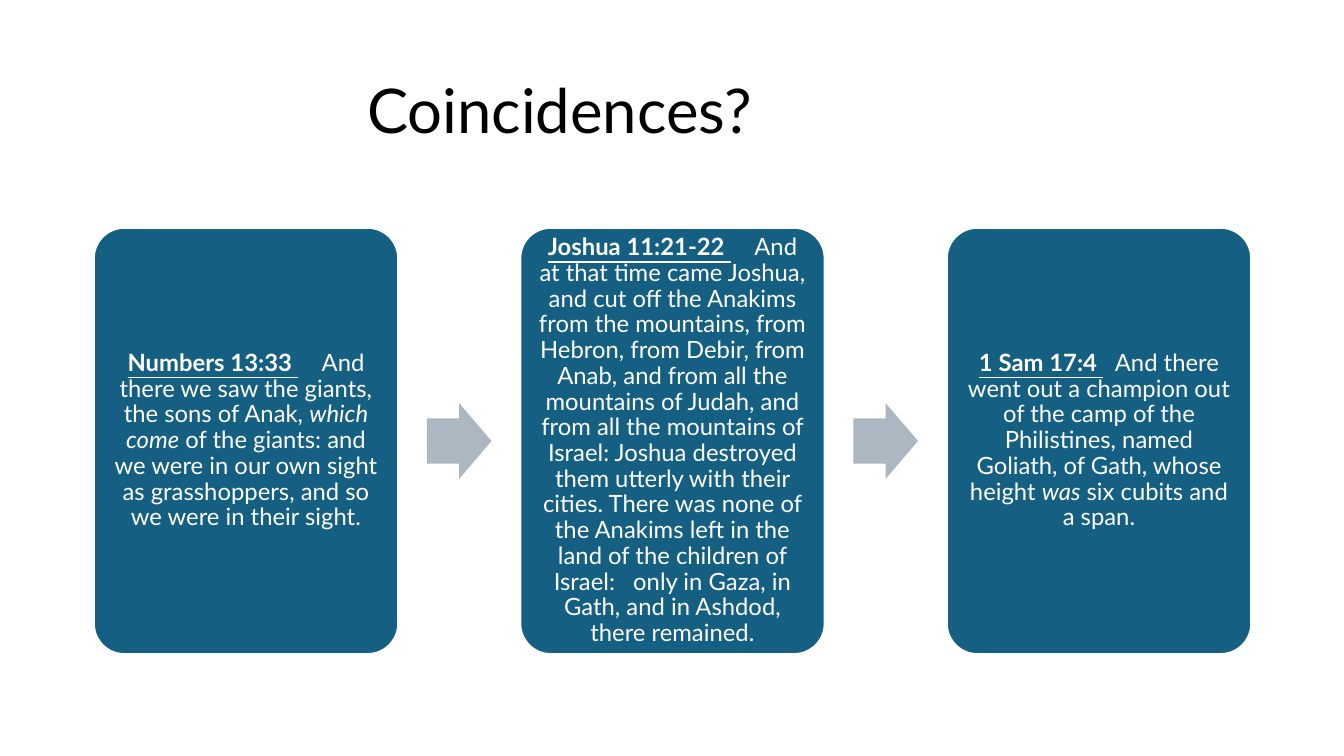
from pptx import Presentation
from pptx.dml.color import RGBColor
from pptx.enum.shapes import MSO_SHAPE
from pptx.enum.text import MSO_ANCHOR, MSO_AUTO_SIZE, PP_ALIGN
from pptx.util import Inches, Pt

TITLE = "Coincidences?"
# Each verse is a list of (text, style); a "wide" run is one stretched space.
VERSES = [
    [
        ("Numbers 13:33", "reference"),
        (" ", "reference wide"),
        ("And there we saw the giants, the sons of Anak, ", ""),
        ("which come", "italic"),
        (" of the giants: and we were in our own sight as grasshoppers, "
         "and so we were in their sight.", ""),
    ],
    [
        ("Joshua 11:21-22", "reference"),
        (" ", "reference wide"),
        ("And at that time came Joshua, and cut off the Anakims from the "
         "mountains, from Hebron, from Debir, from Anab, and from all the "
         "mountains of Judah, and from all the mountains of Israel: Joshua "
         "destroyed them utterly with their cities. There was none of the "
         "Anakims left in the land of the children of Israel:", ""),
        (" ", "medium"),
        ("only in Gaza, in Gath, and in Ashdod, there remained.", ""),
    ],
    [
        ("1 Sam 17:4", "reference"),
        (" ", "reference medium"),
        ("And there went out a champion out of the camp of the Philistines, "
         "named Goliath, of Gath, whose height ", ""),
        ("was", "italic"),
        (" six cubits and a span.", ""),
    ],
]
COLORS = {"card": "156082", "arrow": "ACB7C1", "white": "FFFFFF", "black": "000000"}
FONT = "Lato"
EXTRA_SPACING = {"wide": 1700, "medium": 860}  # hundredths of a point

CARD_LEFT, CARD_TOP, CARD_WIDTH, CARD_HEIGHT = 0.93, 2.26, 3.02, 4.23
CARD_PITCH = 4.23
ARROW_WIDTH, ARROW_HEIGHT = 0.64, 0.75


def color(name):
    return RGBColor.from_string(COLORS[name])


def add_filled_shape(slide, preset, left, top, width, height, fill, adjustments):
    shape = slide.shapes.add_shape(
        preset, Inches(left), Inches(top), Inches(width), Inches(height))
    shape.shadow.inherit = False
    shape.fill.solid()
    shape.fill.fore_color.rgb = color(fill)
    shape.line.fill.background()
    for index, value in enumerate(adjustments):
        shape.adjustments[index] = value
    return shape


def write_verse(frame, verse):
    frame.word_wrap = True
    frame.vertical_anchor = MSO_ANCHOR.MIDDLE
    frame.margin_left = frame.margin_right = Inches(0.07)
    frame.margin_top = frame.margin_bottom = Inches(0.07)
    para = frame.paragraphs[0]
    para.alignment = PP_ALIGN.CENTER
    para.line_spacing = 0.9
    for text, style in verse:
        span = para.add_run()
        span.text = text
        font = span.font
        font.name, font.size = FONT, Pt(17)
        font.color.rgb = color("white")
        font.bold = font.underline = "reference" in style
        font.italic = "italic" in style
        for gap, spacing in EXTRA_SPACING.items():
            if gap in style:
                span._r.get_or_add_rPr().set("spc", str(spacing))


def add_title(slide):
    title = slide.shapes.title
    title.left, title.top = Inches(0.92), Inches(0.4)
    title.width, title.height = Inches(11.5), Inches(1.45)
    frame = title.text_frame
    frame.text = TITLE
    frame.auto_size = MSO_AUTO_SIZE.NONE
    frame.vertical_anchor = MSO_ANCHOR.MIDDLE
    frame.margin_left = Inches(2.72)
    para = frame.paragraphs[0]
    para.alignment = PP_ALIGN.LEFT
    para.line_spacing = 0.9
    para.font.name, para.font.size = FONT, Pt(44)
    para.font.color.rgb = color("black")


def main():
    deck = Presentation()
    deck.slide_width, deck.slide_height = Inches(13.33), Inches(7.5)
    slide = deck.slides.add_slide(deck.slide_layouts[5])
    add_title(slide)

    gap = CARD_PITCH - CARD_WIDTH
    arrow_top = CARD_TOP + (CARD_HEIGHT - ARROW_HEIGHT) / 2
    for index, verse in enumerate(VERSES):
        left = CARD_LEFT + index * CARD_PITCH
        card = add_filled_shape(slide, MSO_SHAPE.ROUNDED_RECTANGLE, left, CARD_TOP,
                                CARD_WIDTH, CARD_HEIGHT, "card", [0.1])
        card.line.color.rgb = color("white")
        card.line.width = Pt(1.5)
        write_verse(card.text_frame, verse)
        if index < len(VERSES) - 1:
            arrow_left = left + CARD_WIDTH + (gap - ARROW_WIDTH) / 2
            add_filled_shape(slide, MSO_SHAPE.RIGHT_ARROW, arrow_left, arrow_top,
                             ARROW_WIDTH, ARROW_HEIGHT, "arrow", [0.6, 0.5])

    deck.save("out.pptx")


if __name__ == "__main__":
    main()
